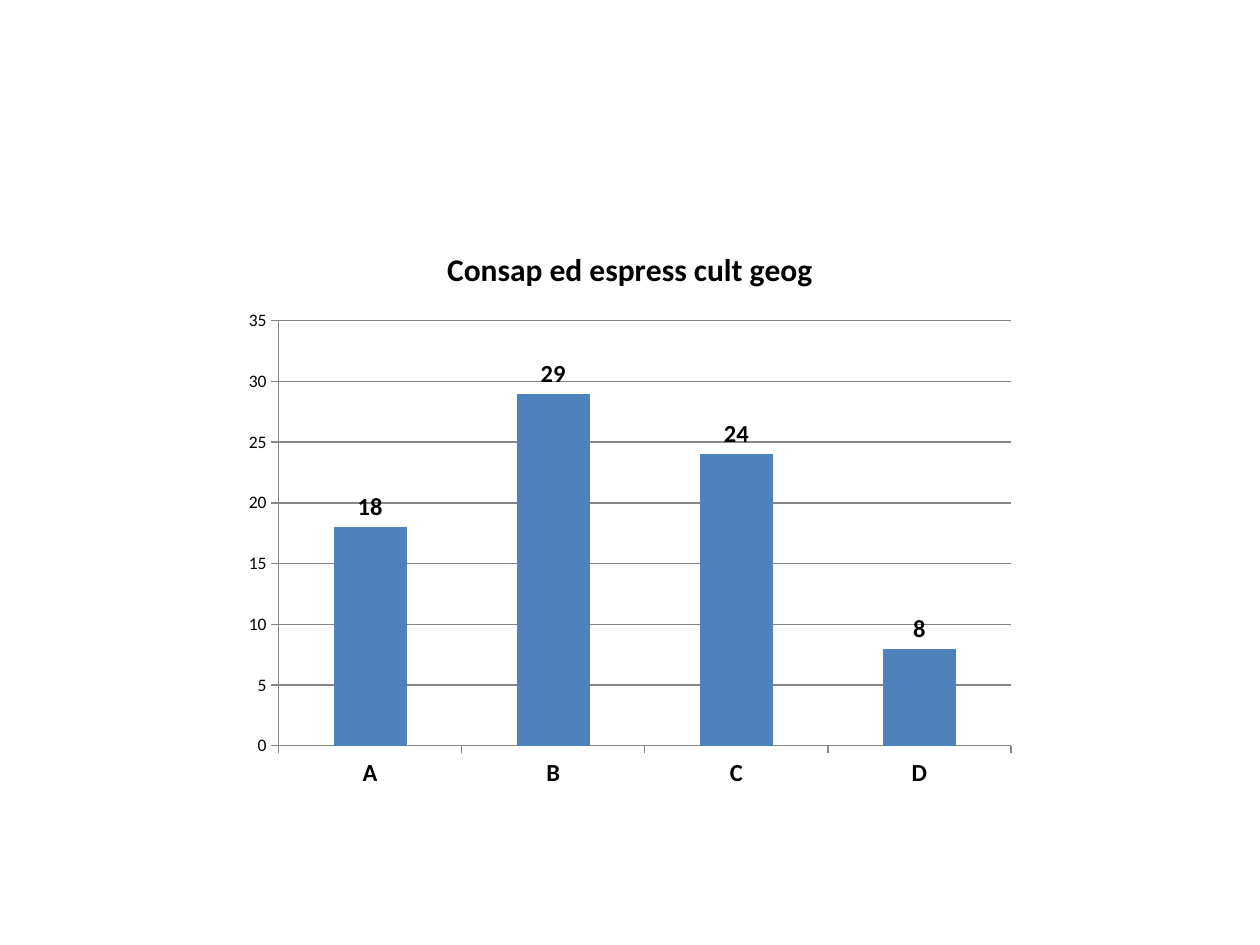
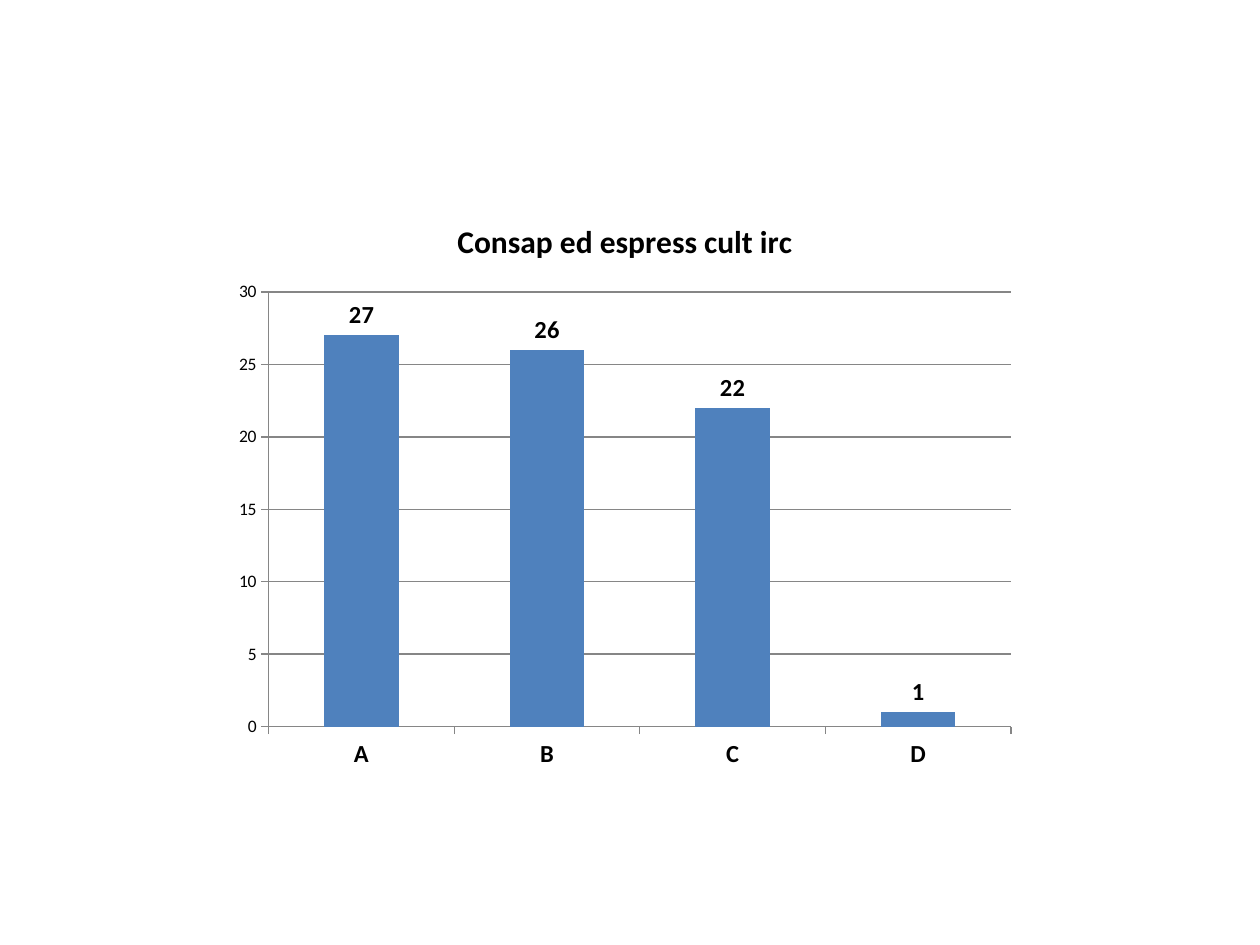
from pptx import Presentation
from pptx.chart.data import CategoryChartData
from pptx.dml.color import RGBColor
from pptx.enum.chart import XL_CHART_TYPE, XL_LABEL_POSITION, XL_TICK_MARK
from pptx.util import Pt

COLUMNS = XL_CHART_TYPE.COLUMN_CLUSTERED
OUTSIDE_END = XL_LABEL_POSITION.OUTSIDE_END
TICK_OUT = XL_TICK_MARK.OUTSIDE
TICK_NONE = XL_TICK_MARK.NONE

# Shared style
EMU_PER_PX = 914400 / 126
FONT = "Calibri"
BLACK, BAR_BLUE, LINE_GREY = "000000", "4F81BD", "868686"
GRADES = ["A", "B", "C", "D"]

# Subject title, pupils per grade, chart box in px
SUBJECTS = [
    ("Consap ed espress cult geog", [18, 29, 24, 8], (233, 224, 794, 576)),
    ("Consap ed espress cult irc", [27, 26, 22, 1], (223, 195, 804, 586)),
]


def px(length):
    return round(length * EMU_PER_PX)


def style_font(font, size, bold=False, color=BLACK):
    font.name = FONT
    font.size = Pt(size)
    font.bold = bold
    font.color.rgb = RGBColor.from_string(color)


prs = Presentation()
prs.slide_width, prs.slide_height = px(1260), px(945)
blank_layout = prs.slide_layouts[6]

for subject, pupils, box in SUBJECTS:
    slide = prs.slides.add_slide(blank_layout)

    # Grade distribution
    grade_data = CategoryChartData(number_format="General")
    grade_data.categories = GRADES
    grade_data.add_series(subject, pupils)
    chart = slide.shapes.add_chart(COLUMNS, *map(px, box), grade_data).chart
    style_font(chart.font, 10)
    chart.has_legend = False

    # Chart title
    chart.has_title = True
    heading = chart.chart_title.text_frame.paragraphs[0].add_run()
    heading.text = subject
    style_font(heading.font, 18, bold=True)
    chart.chart_title.include_in_layout = False

    # Bars and their values
    plot = chart.plots[0]
    plot.gap_width = 150
    plot.vary_by_categories = False
    bars = plot.series[0]
    bars.format.fill.solid()
    bars.format.fill.fore_color.rgb = RGBColor.from_string(BAR_BLUE)
    bars.invert_if_negative = False
    plot.has_data_labels = True
    plot.data_labels.show_value = True
    plot.data_labels.position = OUTSIDE_END
    style_font(plot.data_labels.font, 14, bold=True)

    # Axes and gridlines
    grade_axis, pupil_axis = chart.category_axis, chart.value_axis
    pupil_axis.has_major_gridlines = True
    for axis in (grade_axis, pupil_axis):
        axis.major_tick_mark = TICK_OUT
        axis.minor_tick_mark = TICK_NONE
    for ruled in (grade_axis, pupil_axis, pupil_axis.major_gridlines):
        ruled.format.line.width = Pt(0.75)
        ruled.format.line.color.rgb = RGBColor.from_string(LINE_GREY)
    style_font(grade_axis.tick_labels.font, 14, bold=True)
    style_font(pupil_axis.tick_labels.font, 10)

prs.save("out.pptx")
